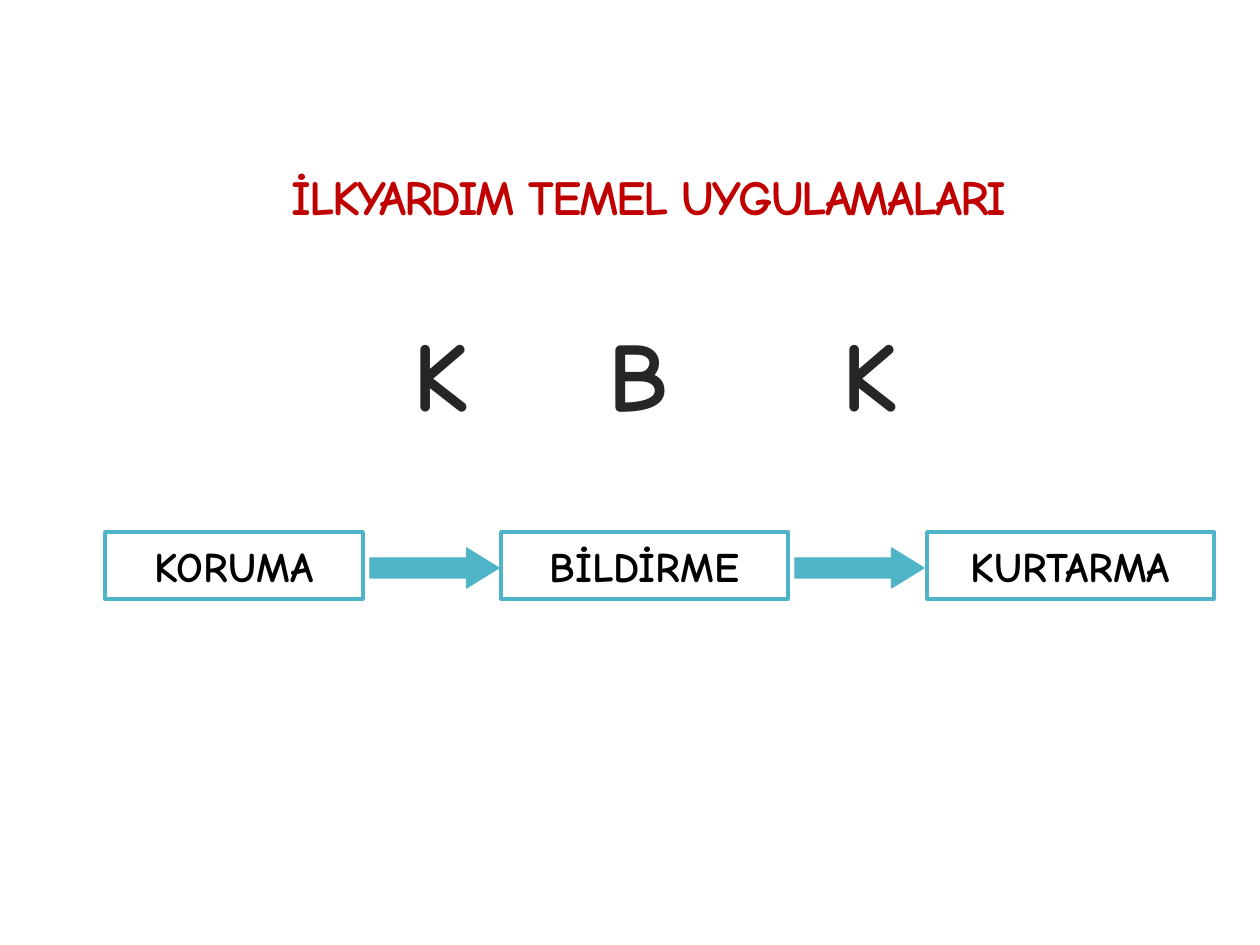
from lxml import etree
from pptx import Presentation, util as u
from pptx.dml.color import RGBColor
from pptx.enum import shapes, text
from pptx.oxml import ns

SCALE = 914400 / 126
TEAL, RED, DARK = "50B4C8", "C00000", "262626"


def px(n):
    return u.Emu(round(n * SCALE))


def tint(code):
    return RGBColor.from_string(code)


def write(frame, words, size=24, color="000000", font="Comic Neue",
          anchor=text.MSO_ANCHOR.MIDDLE, align=text.PP_ALIGN.CENTER,
          lead=None, before=0, track=0, stops=()):
    frame.word_wrap = True
    frame.vertical_anchor = anchor
    para = frame.paragraphs[0]
    para.alignment = align
    para.space_before = u.Pt(before)
    if lead:
        para.line_spacing = lead
    if stops:
        tabs = etree.SubElement(para._p.get_or_add_pPr(), ns.qn("a:tabLst"))
        for stop in stops:
            etree.SubElement(tabs, ns.qn("a:tab"), pos=str(px(stop)), algn="ctr")
    run = para.add_run()
    run.text = words
    run.font.name = font
    run.font.size = u.Pt(size)
    run.font.bold = True
    run.font.color.rgb = tint(color)
    if track:
        run._r.get_or_add_rPr().set("spc", str(track))


class Deck:
    def __init__(self):
        self.file = Presentation()
        self.file.slide_width, self.file.slide_height = px(1260), px(945)
        self.slide = self.file.slides.add_slide(self.file.slide_layouts[6])

    def shape(self, kind, area, fill=None, line=TEAL, width=2):
        item = self.slide.shapes.add_shape(kind, *map(px, area))
        item.shadow.inherit = False
        if fill:
            item.fill.solid()
            item.fill.fore_color.rgb = tint(fill)
        else:
            item.fill.background()
        item.line.color.rgb = tint(line)
        item.line.width = u.Pt(width)
        return item

    def box(self, words, area, fill=None, line=TEAL, **style):
        item = self.shape(shapes.MSO_SHAPE.RECTANGLE, area, fill, line)
        write(item.text_frame, words, **style)

    def arrow(self, area):
        item = self.shape(shapes.MSO_SHAPE.RIGHT_ARROW, area, TEAL, width=0.75)
        item.adjustments[0] = 0.5
        item.adjustments[1] = 0.81

    def label(self, words, area, **style):
        item = self.slide.shapes.add_textbox(*map(px, area))
        write(item.text_frame, words, **style)


def main():
    deck = Deck()
    deck.box("İLKYARDIM TEMEL UYGULAMALARI", (113, 145, 1072, 110),
             "FFFFFF", "FFFFFF", size=28, color=RED, lead=0.9, track=-120)
    deck.label("\tK\tB\tK", (116, 325, 1060, 147), size=56, color=DARK,
               anchor=text.MSO_ANCHOR.TOP, align=text.PP_ALIGN.LEFT,
               lead=0.85, before=13, stops=(313, 510, 742))
    steps = (("KURTARMA", 927, 287), ("BİLDİRME", 501, 287), ("KORUMA", 105, 258))
    for word, left, width in steps:
        deck.box(word, (left, 532, width, 67))
    for left in (370, 795):
        deck.arrow((left, 548, 129, 40))
    deck.file.save("out.pptx")


if __name__ == "__main__":
    main()
